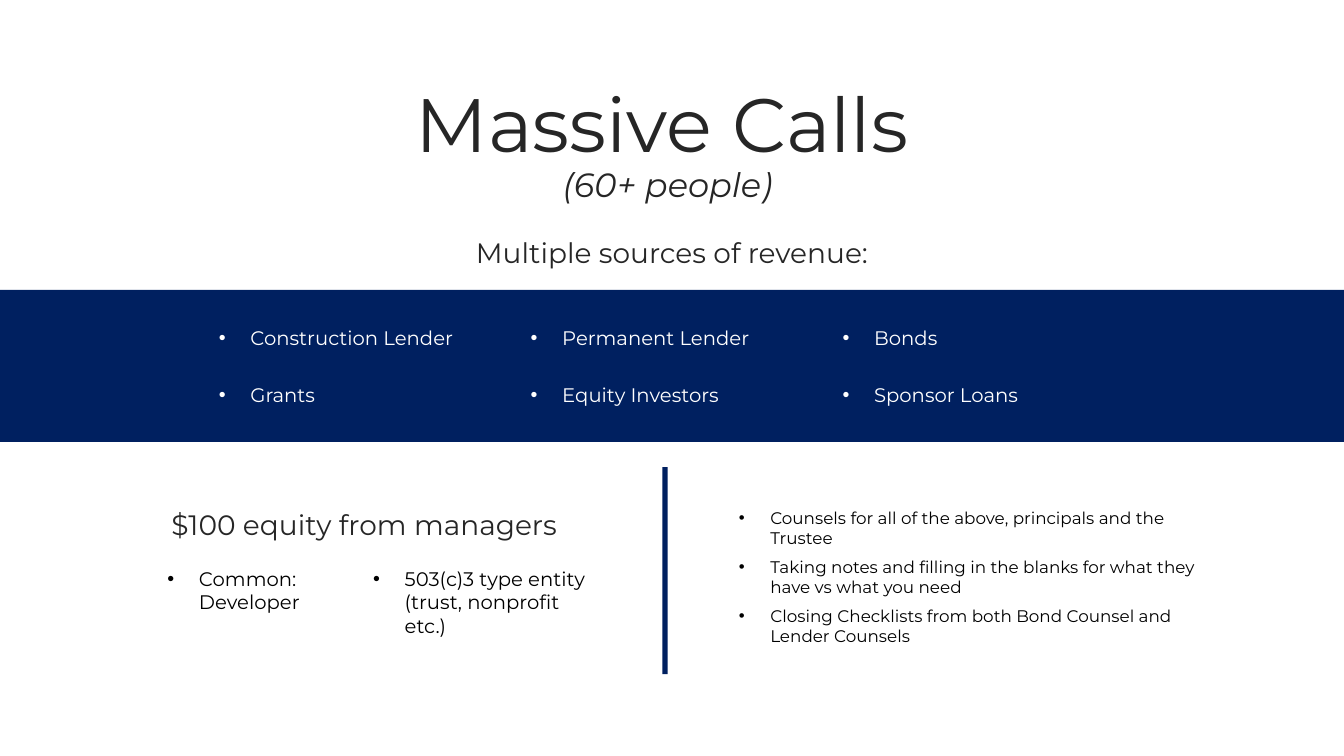
import pptx
import pptx.util
import pptx.dml.color
import pptx.enum.shapes
import pptx.enum.text
import pptx.oxml.ns
import lxml.etree
import dataclasses

PX = 9525


@dataclasses.dataclass(frozen=True)
class Theme:
    font: str = "Montserrat"
    navy: str = "002060"
    gray: str = "262626"
    black: str = "000000"
    white: str = "FFFFFF"
    title: int = 54
    sub: int = 24
    head: int = 20
    item: int = 14
    note: int = 12


THEME = Theme()
ALIGN = pptx.enum.text.PP_ALIGN


def color(code):
    return pptx.dml.color.RGBColor.from_string(code)


def place(shape, box):
    shape.left, shape.top, shape.width, shape.height = [n * PX for n in box]


def text_box(slide, box):
    return slide.shapes.add_textbox(*[n * PX for n in box])


def add_bullet(para):
    props = para._p.get_or_add_pPr()
    props.set("marL", str(30 * PX))
    props.set("indent", str(-30 * PX))
    for tag, key, value in (("a:buFont", "typeface", "Arial"), ("a:buChar", "char", "•")):
        node = lxml.etree.SubElement(props, pptx.oxml.ns.qn(tag))
        node.set(key, value)


def write(shape, lines, code, bullet=False, after=0, pitch=1.0):
    frame = shape.text_frame
    frame.word_wrap = True
    frame.auto_size = pptx.enum.text.MSO_AUTO_SIZE.NONE
    frame.vertical_anchor = pptx.enum.text.MSO_ANCHOR.TOP
    for rank, (words, size, slant) in enumerate(lines):
        para = frame.add_paragraph() if rank else frame.paragraphs[0]
        if bullet:
            add_bullet(para)
        para.alignment = ALIGN.LEFT if bullet else ALIGN.CENTER
        para.line_spacing = pitch
        para.space_before = pptx.util.Pt(0)
        para.space_after = pptx.util.Pt(after)
        run = para.add_run()
        run.text = words
        run.font.name = THEME.font
        run.font.size = pptx.util.Pt(size)
        run.font.italic = slant
        run.font.color.rgb = color(code)


def add_block(slide, box):
    block = slide.shapes.add_shape(
        pptx.enum.shapes.MSO_SHAPE.RECTANGLE, *[n * PX for n in box])
    block.shadow.inherit = False
    block.fill.solid()
    block.fill.fore_color.rgb = color(THEME.navy)
    block.line.fill.background()


def add_item(slide, box, words, code):
    write(text_box(slide, box), [(words, THEME.item, False)], code, bullet=True)


def add_head(slide, box, words):
    write(text_box(slide, box), [(words, THEME.head, False)], THEME.gray)


def draw_top(slide, box):
    left, top, wide, high = box
    title = slide.shapes.title
    place(title, (left, top, wide, 112))
    lines = [("Massive Calls ", THEME.title, False), ("(60+ people) ", THEME.sub, True)]
    write(title, lines, THEME.gray, pitch=0.9)
    add_head(slide, (left, top + high - 42, wide, 42), "Multiple sources of revenue:")


def draw_band(slide, box):
    left, top, wide, high = box
    add_block(slide, box)
    rows = (
        ("Construction Lender", "Permanent Lender", "Bonds"),
        ("Grants", "Equity Investors", "Sponsor Loans"),
    )
    for row, names in enumerate(rows):
        for col, name in enumerate(names):
            spot = (left + 199 + 297 * col, top + 30 + 54 * row, 298, 33)
            add_item(slide, spot, name, THEME.white)


def draw_left(slide, box):
    left, top, wide, high = box
    add_head(slide, (left, top, wide, 42), "$100 equity from managers")
    items = (
        (43, 198, "Common: Developer"),
        (239, 226, "503(c)3 type entity (trust, nonprofit etc.)"),
    )
    for shift, span, words in items:
        add_item(slide, (left + shift, top + 56, span, high - 56), words, THEME.black)


def draw_right(slide, box):
    notes = (
        "Counsels for all of the above, principals and the Trustee",
        "Taking notes and filling in the blanks for what they have vs what you need",
        "Closing Checklists from both Bond Counsel and Lender Counsels",
    )
    body = slide.placeholders[1]
    place(body, box)
    lines = [(note, THEME.note, False) for note in notes]
    write(body, lines, THEME.black, bullet=True, after=6)


def main():
    deck = pptx.Presentation()
    deck.slide_width = 1280 * PX
    deck.slide_height = 720 * PX
    slide = deck.slides.add_slide(deck.slide_layouts[1])
    draw_top(slide, (176, 78, 928, 184))
    draw_band(slide, (0, 276, 1280, 145))
    draw_left(slide, (107, 479, 480, 134))
    add_block(slide, (631, 445, 5, 197))
    draw_right(slide, (694, 479, 476, 142))
    deck.save("out.pptx")


if __name__ == "__main__":
    main()
